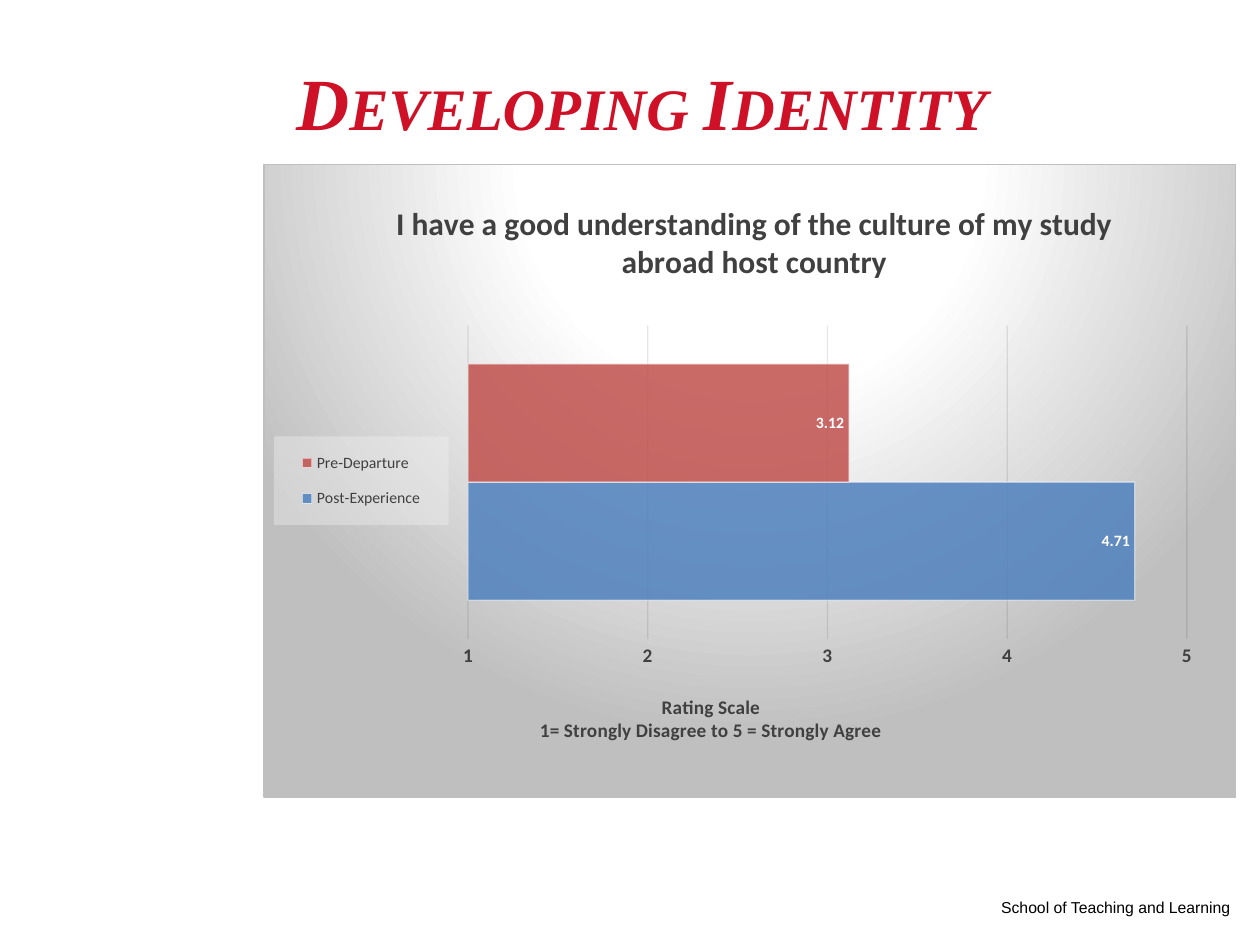
from lxml import etree
from pptx import Presentation
from pptx import util as u
from pptx.chart.data import CategoryChartData
from pptx.dml.color import RGBColor
from pptx.enum import chart as ch, text
from pptx.oxml import parse_xml
from pptx.oxml.ns import nsdecls, qn

DARK = "404040"


def rgb(value):
    return RGBColor.from_string(value)


def set_font(font, name, size, color, bold=False, italic=False):
    font.name, font.size = name, u.Pt(size)
    font.bold, font.italic = bold, italic
    font.color.rgb = rgb(color)


def paint(fill, color, opacity=100):
    fill.solid()
    fill.fore_color.rgb = rgb(color)
    if opacity < 100:
        clr = fill._xPr.find(qn("a:solidFill") + "/" + qn("a:srgbClr"))
        etree.SubElement(clr, qn("a:alpha")).set("val", str(opacity * 1000))


def draw_line(line, color, opacity):
    line.width = u.Pt(0.75)
    paint(line.fill, color, opacity)


def place(parent, x, y, w=None, h=None, after=None, inner=False):
    for old in parent.findall(qn("c:layout")):
        parent.remove(old)
    layout = etree.Element(qn("c:layout"))
    manual = etree.SubElement(layout, qn("c:manualLayout"))
    values = [("layoutTarget", "inner")] if inner else []
    values += [("xMode", "edge"), ("yMode", "edge"), ("x", x), ("y", y)]
    values += [(k, v) for k, v in (("w", w), ("h", h)) if v is not None]
    for key, value in values:
        etree.SubElement(manual, qn("c:" + key)).set("val", str(value))
    if after:
        parent.find(qn(after)).addnext(layout)
    else:
        parent.insert(0, layout)


def add_title(s, words):
    sp = s.shapes.title
    sp.left, sp.top, sp.width, sp.height = u.Cm(5.72), u.Cm(0.76), u.Cm(18.42), u.Cm(2.54)
    tf = sp.text_frame
    tf.text = words
    tf.auto_size = text.MSO_AUTO_SIZE.NONE
    tf.vertical_anchor = text.MSO_ANCHOR.MIDDLE
    p = tf.paragraphs[0]
    p.alignment = text.PP_ALIGN.LEFT
    set_font(p.font, "Times New Roman", 42, "CE1126", True, True)
    p.font._rPr.set("cap", "small")


def add_footer(s, words):
    tf = s.shapes.add_textbox(u.Cm(15.14), u.Cm(17.98), u.Cm(9.91), u.Cm(0.64)).text_frame
    tf.word_wrap = True
    tf.text = words
    p = tf.paragraphs[0]
    p.alignment = text.PP_ALIGN.RIGHT
    set_font(p.font, "Arial", 9, "000000")


def add_heading(heading, words, size, x, y):
    tf = heading.text_frame
    tf.text = words
    for p in tf.paragraphs:
        p.alignment = text.PP_ALIGN.CENTER
        set_font(p.font, "Calibri", size, DARK, True)
    place(heading._element, x, y, after="c:tx")


def style_background(chart):
    stops = "".join(
        f'<a:gs pos="{pos * 1000}"><a:srgbClr val="{color}"/></a:gs>'
        for pos, color in ((0, "FFFFFF"), (39, "FFFFFF"), (100, "BFBFBF")))
    chart._chartSpace.find(qn("c:chart")).addnext(parse_xml(
        f'<c:spPr {nsdecls("c", "a")}><a:gradFill><a:gsLst>{stops}</a:gsLst>'
        '<a:path path="circle">'
        '<a:fillToRect l="50000" t="-80000" r="50000" b="180000"/></a:path></a:gradFill>'
        '<a:ln w="9525"><a:solidFill><a:srgbClr val="BFBFBF"/></a:solidFill></a:ln></c:spPr>'))


def style_series(series, color):
    paint(series.format.fill, color, 85)
    draw_line(series.format.line, "FFFFFF", 50)
    labels = series.data_labels
    labels.show_value = True
    labels.position = ch.XL_LABEL_POSITION.INSIDE_END
    set_font(labels.font, "Calibri", 9, "FFFFFF", True)


def style_axes(chart):
    chart.category_axis.visible = False
    axis = chart.value_axis
    axis.minimum_scale, axis.maximum_scale, axis.major_unit = 1, 5, 1
    axis.major_tick_mark = axis.minor_tick_mark = ch.XL_TICK_MARK.NONE
    axis.format.line.fill.background()
    draw_line(axis.major_gridlines.format.line, "0D0D0D", 10)
    set_font(axis.tick_labels.font, "Calibri", 11, DARK, True)
    add_heading(axis.axis_title, "Rating Scale\n1= Strongly Disagree to 5 = Strongly Agree",
                11, 0.28, 0.83)


def style_legend(chart):
    chart.has_legend = True
    legend = chart.legend
    legend.position = ch.XL_LEGEND_POSITION.RIGHT
    legend.include_in_layout = False
    set_font(legend.font, "Calibri", 9, DARK)
    place(legend._element, 0.01, 0.43, 0.18, 0.14, after="c:legendPos")
    sp_pr = parse_xml(
        f'<c:spPr {nsdecls("c", "a")}><a:solidFill><a:srgbClr val="F2F2F2">'
        '<a:alpha val="39000"/></a:srgbClr></a:solidFill></c:spPr>')
    legend._element.find(qn("c:txPr")).addprevious(sp_pr)


def add_rating_chart(s, ratings):
    data = CategoryChartData(number_format="General")
    data.categories = ["1"]
    for name, value, _ in ratings:
        data.add_series(name, [value])
    chart = s.shapes.add_chart(
        ch.XL_CHART_TYPE.BAR_CLUSTERED,
        u.Cm(5.31), u.Cm(3.3), u.Cm(19.61), u.Cm(12.78), data).chart
    set_font(chart.font, "Calibri", 10, "000000")
    style_background(chart)
    plot = chart.plots[0]
    plot.gap_width, plot.overlap, plot.vary_by_categories = 65, 0, False
    for series, (_, _, color) in zip(plot.series, ratings):
        style_series(series, color)
    style_axes(chart)
    style_legend(chart)
    chart.has_title = True
    add_heading(chart.chart_title,
                "I have a good understanding of the culture of my study abroad host country",
                18, 0.13, 0.05)
    place(chart._chartSpace.find(".//" + qn("c:plotArea")),
          0.21, 0.255, 0.74, 0.495, inner=True)


def main():
    prs = Presentation()
    prs.slide_width, prs.slide_height = u.Cm(25.4), u.Cm(19.05)
    s = prs.slides.add_slide(prs.slide_layouts[5])
    add_footer(s, "School of Teaching and Learning")
    add_title(s, "Developing Identity")
    add_rating_chart(s, [("Post-Experience", 4.71, "4F81BD"),
                         ("Pre-Departure", 3.12, "C0504D")])
    prs.save("out.pptx")


if __name__ == "__main__":
    main()
